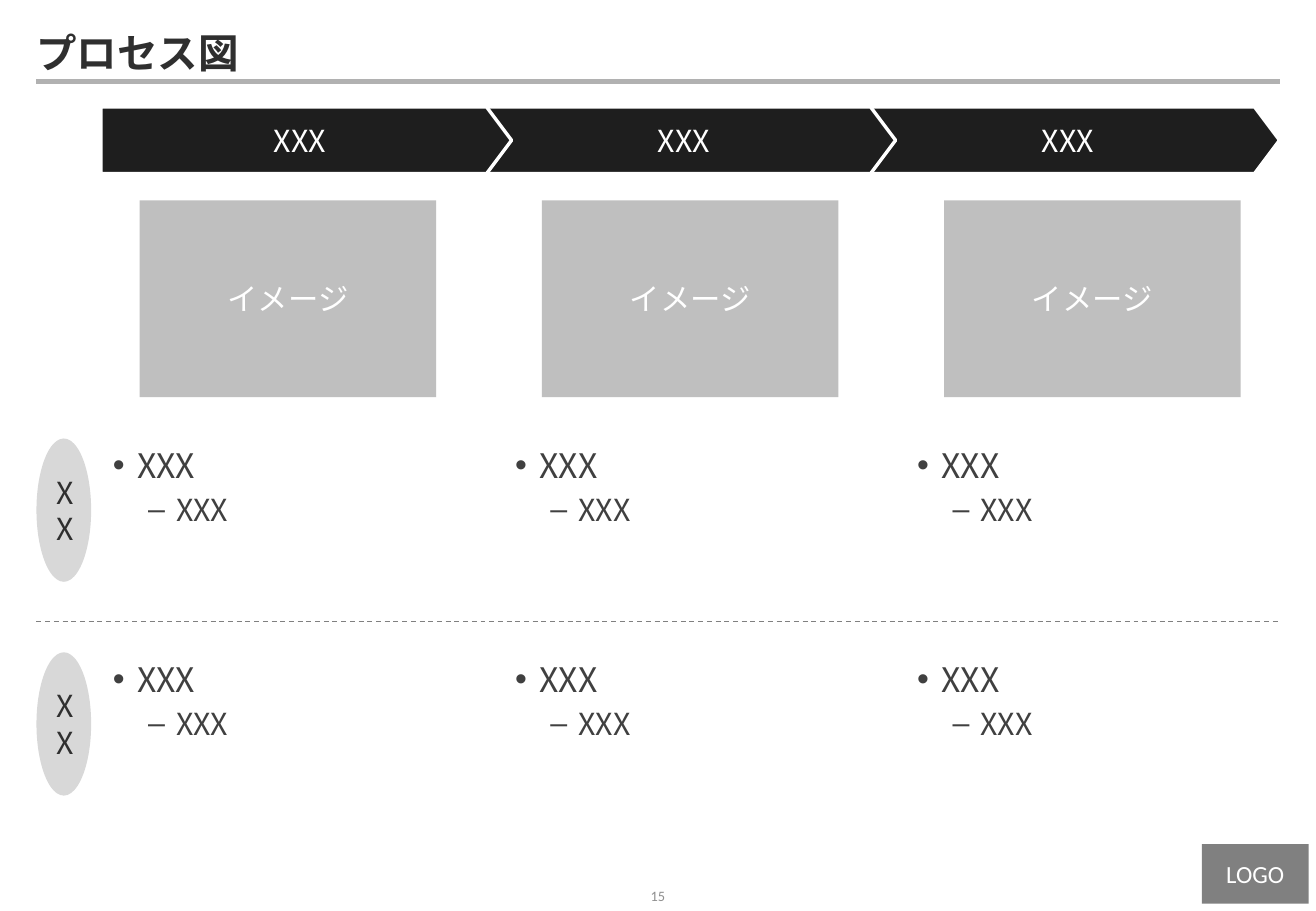
from dataclasses import dataclass
from typing import Any, Optional

from lxml.etree import SubElement
from pptx import Presentation
from pptx.dml.color import RGBColor
from pptx.enum.dml import MSO_LINE
from pptx.enum.shapes import MSO_CONNECTOR, MSO_SHAPE as Geo
from pptx.enum.text import MSO_ANCHOR as Anchor, MSO_AUTO_SIZE, PP_ALIGN as Align
from pptx.oxml.ns import qn
from pptx.util import Emu, Pt

EMU_PER_PX = 9144  # 100 px to the inch

WHITE = RGBColor(0xFF, 0xFF, 0xFF)
INK = RGBColor(0x2F, 0x2F, 0x2F)
BODY = RGBColor(0x40, 0x40, 0x40)
STEP_BLACK = RGBColor(0x1E, 0x1E, 0x1E)
IMAGE_GREY = RGBColor(0xBF, 0xBF, 0xBF)
ROW_GREY = RGBColor(0xD8, 0xD8, 0xD8)
MID_GREY = RGBColor(0x80, 0x80, 0x80)
RULE_GREY = RGBColor(0xB1, 0xB1, 0xB1)
PAGE_GREY = RGBColor(0x8F, 0x8F, 0x8F)

CJK = "Noto Sans CJK JP"
LATIN = "Calibri"

STEPS = ["XXX", "XXX", "XXX"]
ROW_LABELS = ["XX", "XX"]
STEP_LEFT, STEP_PITCH = 83, 316
COLUMN_LEFT, COLUMN_PITCH = 83, 331
ROW_TOP, ROW_PITCH = 361, 176
RULE_LEFT, RULE_RIGHT = 30, 1053


@dataclass(frozen=True)
class Box:
    left: int
    top: int
    width: int
    height: int

    def emu(self) -> list[Emu]:
        return [px(n) for n in (self.left, self.top, self.width, self.height)]


@dataclass(frozen=True)
class Look:
    geometry: Geo
    fill: RGBColor
    text: RGBColor
    size: float = 18
    font: str = CJK
    outline: Optional[RGBColor] = None


@dataclass(frozen=True)
class Level:
    bullet: str
    size: int
    margin: int
    hanging: int


STEP = Look(Geo.PENTAGON, STEP_BLACK, WHITE, outline=WHITE)
IMAGE = Look(Geo.RECTANGLE, IMAGE_GREY, WHITE)
ROW_LABEL = Look(Geo.OVAL, ROW_GREY, INK)
LOGO = Look(Geo.RECTANGLE, MID_GREY, WHITE, 14.6, LATIN)
LEVELS = [Level("•", 20, 20, 20), Level("–", 18, 52, 23)]
NO_MARGINS = dict(margin_left=0, margin_top=0, margin_right=0, margin_bottom=0)


def px(count: int) -> Emu:
    return Emu(count * EMU_PER_PX)


def set_format(target: Any, values: dict[str, Any]) -> None:
    for name, value in values.items():
        setattr(target, name, value)


def add_run(paragraph, text: str, font: str, size: float, color: RGBColor, bold: bool = False) -> None:
    run = paragraph.add_run()
    run.text = text
    set_format(run.font, dict(name=font, size=Pt(size), bold=bold))
    run.font.color.rgb = color
    SubElement(run.font._element, qn("a:ea"), typeface=font)


def add_label(slide, box: Box, text: str, look: Look):
    shape = slide.shapes.add_shape(look.geometry, *box.emu())
    shape.shadow.inherit = False
    shape.fill.solid()
    shape.fill.fore_color.rgb = look.fill
    if look.outline is None:
        shape.line.fill.background()
    else:
        shape.line.color.rgb = look.outline
        shape.line.width = Pt(2)
    set_format(shape.text_frame, dict(word_wrap=True, vertical_anchor=Anchor.MIDDLE))
    paragraph = shape.text_frame.paragraphs[0]
    paragraph.alignment = Align.CENTER
    add_run(paragraph, text, look.font, look.size, look.text)
    return shape


def add_rule(slide, top: int, color: RGBColor, width: float, dash: Optional[MSO_LINE] = None) -> None:
    rule = slide.shapes.add_connector(
        MSO_CONNECTOR.STRAIGHT, px(RULE_LEFT), px(top), px(RULE_RIGHT), px(top))
    rule.line.color.rgb = color
    set_format(rule.line, dict(width=Pt(width), dash_style=dash))
    SubElement(rule._element.spPr, qn("a:effectLst"))


def add_bullets(slide, box: Box, texts: list[str]) -> None:
    frame = slide.shapes.add_textbox(*box.emu()).text_frame
    frame.word_wrap = True
    for depth, (text, level) in enumerate(zip(texts, LEVELS)):
        paragraph = frame.add_paragraph() if depth else frame.paragraphs[0]
        paragraph.level = depth
        properties = paragraph._p.get_or_add_pPr()
        properties.set("marL", str(px(level.margin)))
        properties.set("indent", str(px(-level.hanging)))
        before = SubElement(properties, qn("a:spcBef"))
        SubElement(before, qn("a:spcPct"), val="20000")
        SubElement(properties, qn("a:buFont"), typeface="Arial")
        SubElement(properties, qn("a:buChar"), char=level.bullet)
        add_run(paragraph, text, CJK, level.size, BODY)


def add_title(slide, text: str) -> None:
    title = slide.shapes.title
    set_format(title, dict(zip(("left", "top", "width", "height"), Box(30, 25, 1024, 41).emu())))
    set_format(title.text_frame, NO_MARGINS | dict(
        margin_right=px(10), vertical_anchor=Anchor.MIDDLE,
        word_wrap=True, auto_size=MSO_AUTO_SIZE.NONE))
    paragraph = title.text_frame.paragraphs[0]
    set_format(paragraph, dict(alignment=Align.LEFT, line_spacing=0.9))
    add_run(paragraph, text, CJK, 24, INK, bold=True)


def add_page_number(slide, number: str) -> None:
    frame = slide.shapes.add_textbox(*Box(510, 725, 63, 25).emu()).text_frame
    set_format(frame, NO_MARGINS | dict(word_wrap=True, vertical_anchor=Anchor.MIDDLE))
    frame.paragraphs[0].alignment = Align.CENTER
    add_run(frame.paragraphs[0], number, LATIN, 8.5, PAGE_GREY)


def main() -> None:
    deck = Presentation()
    set_format(deck, dict(slide_width=px(1083), slide_height=px(750)))
    slide = deck.slides.add_slide(deck.slide_layouts[5])

    # Frame of the page
    add_rule(slide, 67, RULE_GREY, 3)
    add_label(slide, Box(989, 695, 88, 49), "LOGO", LOGO)
    add_page_number(slide, "15")
    add_title(slide, "プロセス図")

    # Process steps, the leftmost on top
    for index, step in reversed(list(enumerate(STEPS))):
        arrow = add_label(slide, Box(STEP_LEFT + index * STEP_PITCH, 88, 338, 55), step, STEP)
        arrow.adjustments[0] = 0.375

    # Image and bullets under each step
    for column in range(len(STEPS)):
        left = COLUMN_LEFT + column * COLUMN_PITCH
        add_label(slide, Box(left + 32, 165, 244, 162), "イメージ", IMAGE)
        for row in range(len(ROW_LABELS)):
            add_bullets(slide, Box(left, ROW_TOP + row * ROW_PITCH, 309, 152), ["XXX", "XXX"])

    # Row labels and the divider between rows
    for row, label in enumerate(ROW_LABELS):
        add_label(slide, Box(30, ROW_TOP + row * ROW_PITCH, 45, 118), label, ROW_LABEL)
    add_rule(slide, 512, MID_GREY, 0.75, MSO_LINE.DASH)

    deck.save("out.pptx")


if __name__ == "__main__":
    main()
